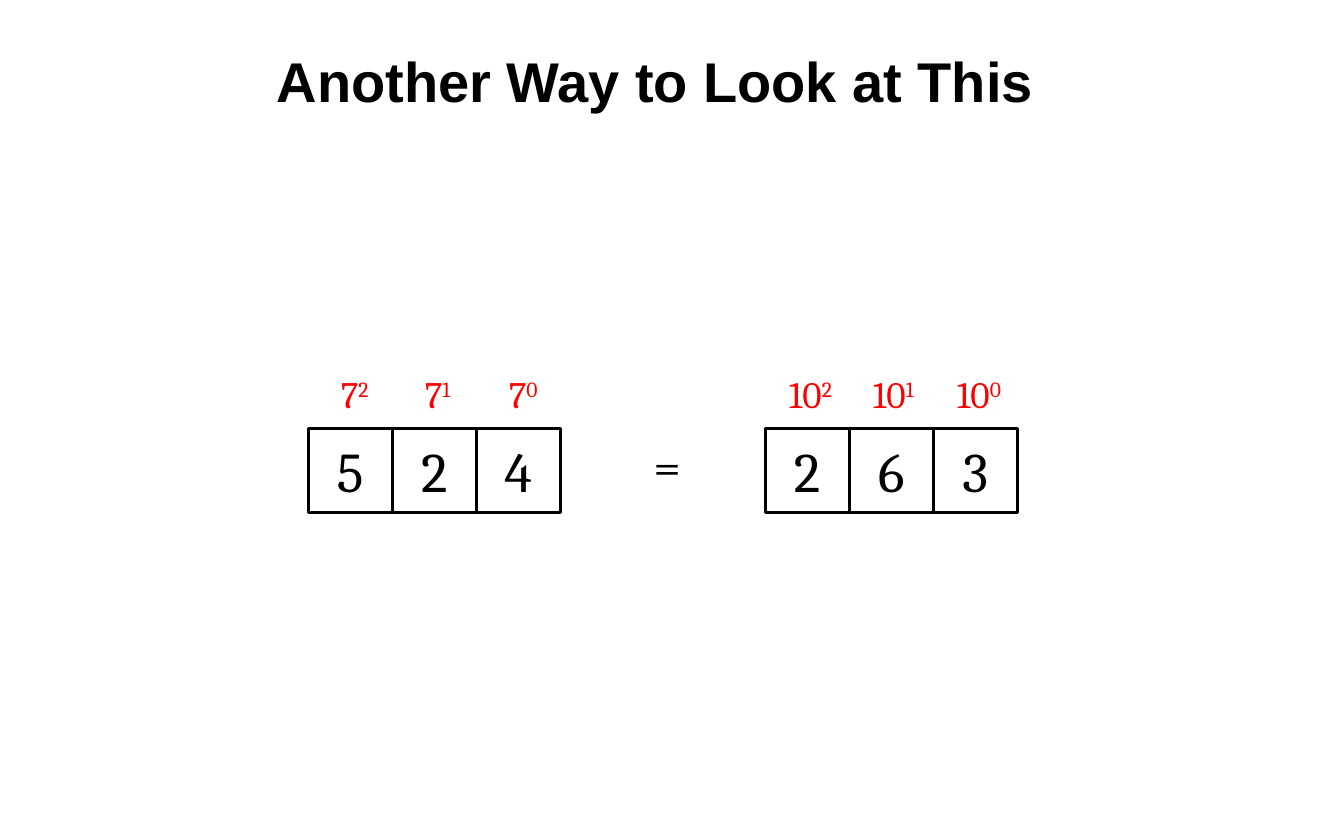
from dataclasses import dataclass

from pptx import Presentation
from pptx import util as u
from pptx.dml.color import RGBColor
from pptx.enum import shapes, text

COLS, ROWS = 16, 10
WIDTH, HEIGHT = u.Inches(10), u.Inches(6.25)


@dataclass(frozen=True)
class Theme:
    ink: str = "000000"
    accent: str = "FF0000"
    title_font: str = "Arial"
    body_font: str = "Cambria"
    large: float = 30
    equals: float = 26.7
    label: float = 20
    line: float = 1.5


def write(shape, *parts, size, font, color, bold=False, wrap=True,
          align=text.PP_ALIGN.CENTER, anchor=text.MSO_ANCHOR.MIDDLE):
    """Write one paragraph; every part after the first is a superscript."""
    tf = shape.text_frame
    tf.word_wrap = wrap
    tf.vertical_anchor = anchor
    p = tf.paragraphs[0]
    p.alignment = align
    for i, part in enumerate(parts):
        r = p.add_run()
        r.text = part
        r.font.size = u.Pt(size)
        r.font.name = font
        r.font.bold = bold
        r.font.color.rgb = RGBColor.from_string(color)
        if i:
            r.font._element.set("baseline", "30000")


class Slide:
    def __init__(self, prs, theme):
        self.s = prs.slides.add_slide(prs.slide_layouts[6])
        self.theme = theme

    def area(self, col, row, cols, rows):
        """Turn grid units into left, top, width and height."""
        x, y = WIDTH / COLS, HEIGHT / ROWS
        return [u.Emu(round(v)) for v in (col * x, row * y, cols * x, rows * y)]

    def title(self, words):
        t = self.theme
        box = self.s.shapes.add_textbox(*self.area(0, 0.45, 15.6, 1))
        write(box, words, size=t.large, font=t.title_font, color=t.ink, bold=True)

    def caption(self, *parts, at, size, color):
        box = self.s.shapes.add_textbox(*self.area(*at))
        write(box, *parts, size=size, font=self.theme.body_font, color=color,
              wrap=False, align=text.PP_ALIGN.LEFT, anchor=text.MSO_ANCHOR.TOP)

    def digit(self, group, value, col, row):
        t = self.theme
        sp = group.shapes.add_shape(shapes.MSO_SHAPE.RECTANGLE,
                                    *self.area(col, row, 1, 1))
        sp.shadow.inherit = False
        sp.fill.background()
        sp.line.color.rgb = RGBColor.from_string(t.ink)
        sp.line.width = u.Pt(t.line)
        write(sp, value, size=t.large, font=t.body_font, color=t.ink)

    def number(self, digits, base, col, row, label_cols):
        """Draw a boxed number with the place value above each digit."""
        t = self.theme
        group = self.s.shapes.add_group_shape()
        for i, value in enumerate(digits):
            self.digit(group, value, col + i, row)
            left = col + i + 0.58 - label_cols / 2
            self.caption(base, str(len(digits) - 1 - i),
                         at=(left, row - 0.76, label_cols, 0.7),
                         size=t.label, color=t.accent)


def main():
    prs = Presentation()
    prs.slide_width, prs.slide_height = WIDTH, HEIGHT
    theme = Theme()
    slide = Slide(prs, theme)
    row = 5.1
    slide.title("Another Way to Look at This")
    slide.number("524", "7", col=3.67, row=row, label_cols=0.7)
    slide.number("263", "10", col=9.11, row=row, label_cols=0.91)
    slide.caption("=", at=(7.62, row, 0.66, 0.88), size=theme.equals, color=theme.ink)
    prs.save("out.pptx")


if __name__ == "__main__":
    main()
